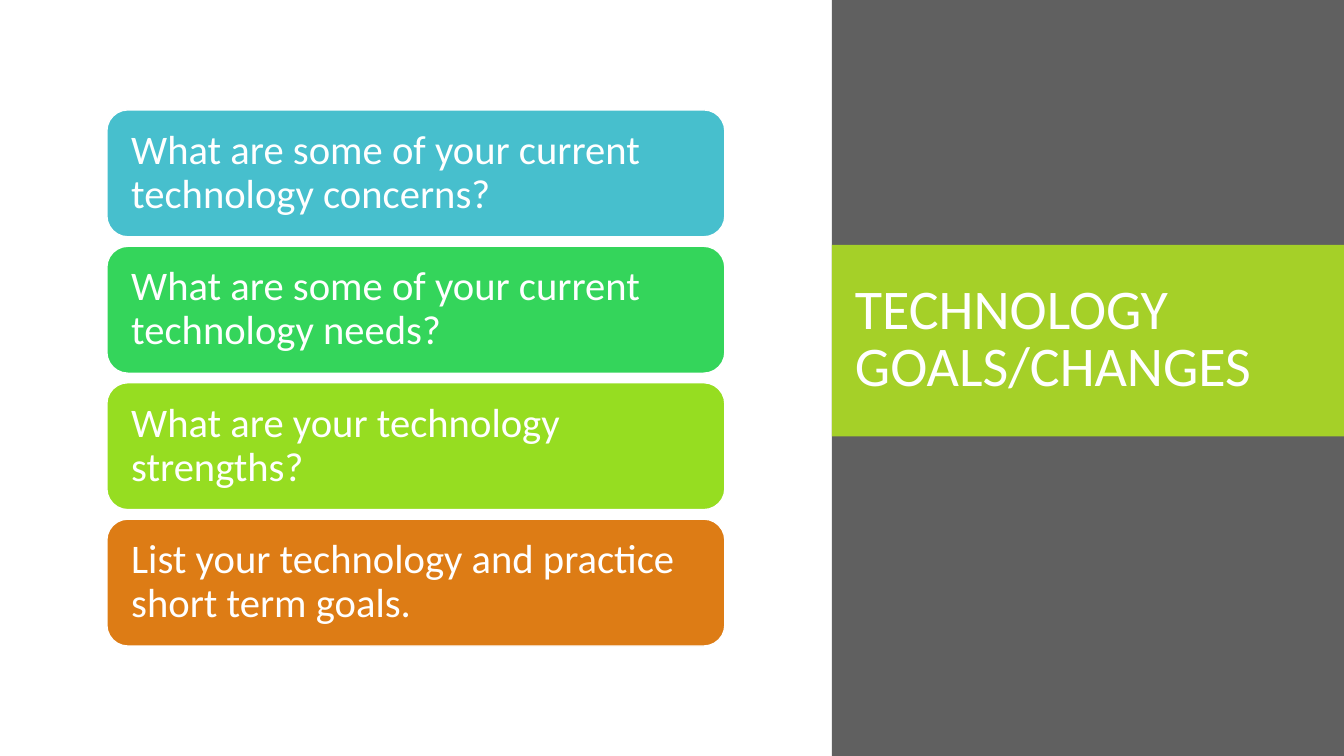
"""Build the technology goals slide: four question cards beside a titled side panel."""
from dataclasses import dataclass

from pptx import Presentation
from pptx.dml.color import RGBColor
from pptx.enum.shapes import MSO_SHAPE
from pptx.enum.text import MSO_ANCHOR, PP_ALIGN
from pptx.shapes.autoshape import Shape
from pptx.slide import Slide
from pptx.util import Inches, Pt

WHITE = RGBColor(0xFF, 0xFF, 0xFF)
GRAY = RGBColor(0x60, 0x60, 0x60)
LIME = RGBColor(0xA5, 0xD0, 0x28)
TEAL = RGBColor(0x47, 0xBF, 0xCD)
GREEN = RGBColor(0x34, 0xD5, 0x5B)
YELLOW_GREEN = RGBColor(0x96, 0xDD, 0x21)
ORANGE = RGBColor(0xDD, 0x7C, 0x15)

FONT = "Calibri"
PANEL_LEFT, PANEL_WIDTH = 8.25, 5.09
CARD_LEFT, CARD_WIDTH, CARD_HEIGHT = 1.06, 6.13, 1.26
FIRST_CARD_TOP, LAST_CARD_TOP = 1.09, 5.15


@dataclass(frozen=True)
class Card:
    """A question and the colour of its card."""

    question: str
    color: RGBColor


CARDS = [
    Card("What are some of your current technology concerns?", TEAL),
    Card("What are some of your current technology needs?", GREEN),
    Card("What are your technology strengths?", YELLOW_GREEN),
    Card("List your technology and practice short term goals.", ORANGE),
]


def add_box(page: Slide, kind: MSO_SHAPE, left: float, top: float,
            width: float, height: float, color: RGBColor) -> Shape:
    """Add a flat filled shape without an outline."""
    box = page.shapes.add_shape(kind, Inches(left), Inches(top), Inches(width), Inches(height))
    box.shadow.inherit = False
    box.fill.solid()
    box.fill.fore_color.rgb = color
    box.line.fill.background()
    return box


def write(box: Shape, text: str, size: float, spacing: float,
          left_inset: float, right_inset: float) -> None:
    """Write white, left-aligned, vertically centred text in a shape."""
    frame = box.text_frame
    frame.word_wrap = True
    frame.vertical_anchor = MSO_ANCHOR.MIDDLE
    frame.margin_left, frame.margin_right = Inches(left_inset), Inches(right_inset)
    para = frame.paragraphs[0]
    para.text = text
    para.alignment = PP_ALIGN.LEFT
    para.line_spacing = spacing
    para.font.name = FONT
    para.font.size = Pt(size)
    para.font.color.rgb = WHITE


def add_panel(page: Slide) -> None:
    """Draw the side panel and its title banner."""
    add_box(page, MSO_SHAPE.RECTANGLE, PANEL_LEFT, 0, PANEL_WIDTH, 7.5, GRAY)
    banner = add_box(page, MSO_SHAPE.RECTANGLE, PANEL_LEFT, 2.43, PANEL_WIDTH, 1.9, LIME)
    write(banner, "TECHNOLOGY GOALS/CHANGES", 40, 0.85, 0.23, 0.54)


def add_cards(page: Slide) -> None:
    """Stack the question cards at equal steps."""
    step = (LAST_CARD_TOP - FIRST_CARD_TOP) / (len(CARDS) - 1)
    for index, card in enumerate(CARDS):
        box = add_box(page, MSO_SHAPE.ROUNDED_RECTANGLE, CARD_LEFT,
                      FIRST_CARD_TOP + index * step, CARD_WIDTH, CARD_HEIGHT, card.color)
        box.line.color.rgb = WHITE
        box.line.width = Pt(1)
        write(box, card.question, 29, 0.9, 0.18, 0.18)


def main() -> None:
    """Create and save the deck."""
    deck = Presentation()
    deck.slide_width, deck.slide_height = Inches(13.33), Inches(7.5)
    page = deck.slides.add_slide(deck.slide_layouts[6])
    add_panel(page)
    add_cards(page)
    deck.save("out.pptx")


if __name__ == "__main__":
    main()
